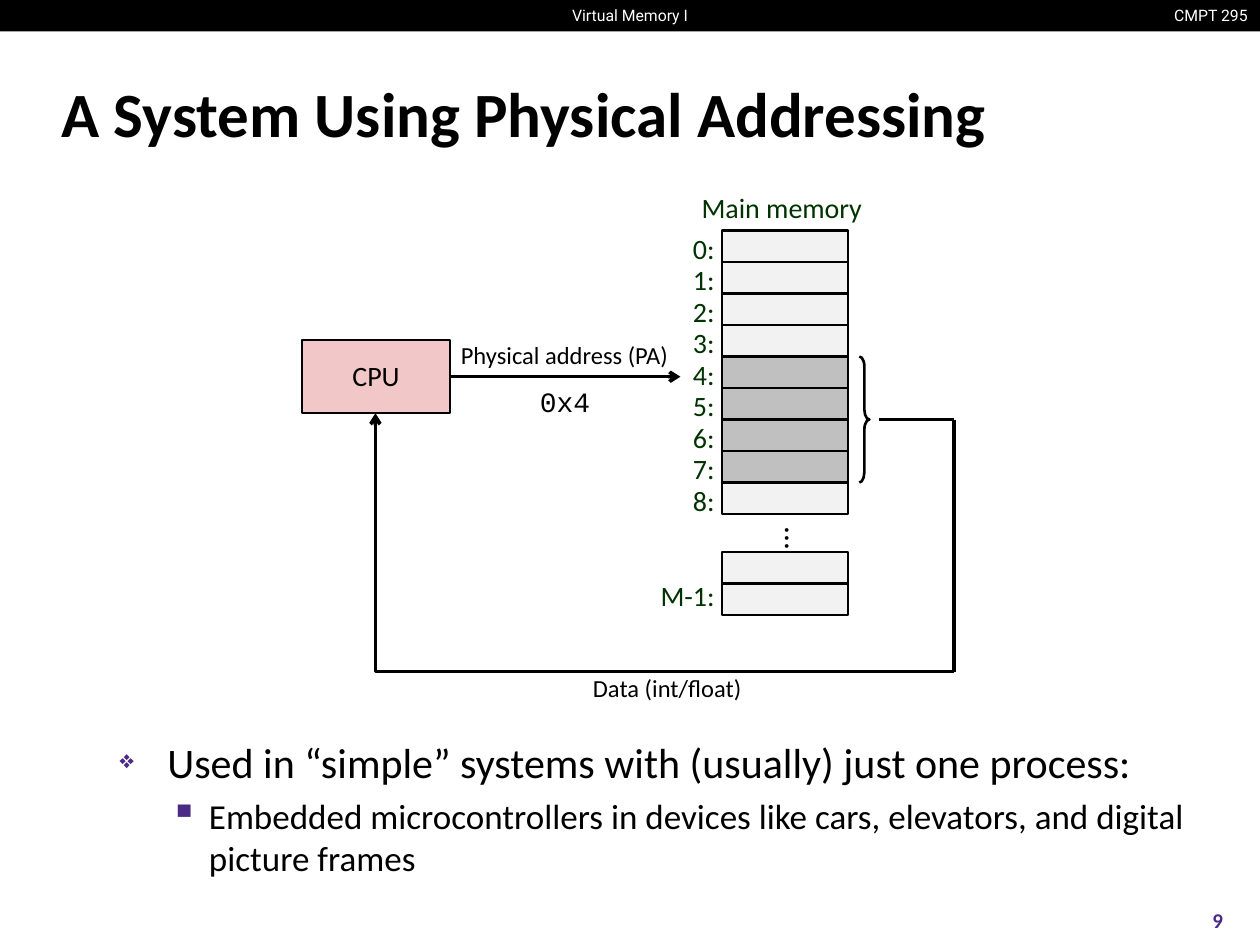
from dataclasses import dataclass
from lxml.etree import SubElement
from pptx import Presentation
from pptx.dml.color import RGBColor
from pptx.enum.shapes import MSO_CONNECTOR as Link, MSO_SHAPE as Kind
from pptx.enum.text import MSO_ANCHOR as Anchor, PP_ALIGN as Align
from pptx.oxml.ns import qn
from pptx.util import Inches, Pt


@dataclass(frozen=True)
class Theme:
    black: str = "000000"
    white: str = "FFFFFF"
    green: str = "003300"
    purple: str = "4B2A85"
    pink: str = "F1C7C7"
    pale: str = "F2F2F2"
    gray: str = "C0C0C0"
    body: str = "Calibri"
    code: str = "Courier New"
    bar: str = "Roboto"
    title: int = 36
    main: int = 24
    sub: int = 20
    dots: int = 18
    label: int = 16
    note: int = 14
    page: int = 12
    head: int = 9


T = Theme()


@dataclass(frozen=True)
class Box:
    x: float
    y: float
    w: float
    h: float

    def emu(self) -> tuple:
        return tuple(Inches(v) for v in (self.x, self.y, self.w, self.h))


@dataclass(frozen=True)
class Label:
    text: str
    box: Box
    size: int
    color: str = T.black
    font: str = T.body
    align: Align = Align.CENTER
    anchor: Anchor = Anchor.TOP
    bold: bool = False
    gap: float = 1.0
    before: int = 0


@dataclass(frozen=True)
class Bullet:
    text: str
    size: int
    mark: str
    scale: int
    left: float
    hang: float
    before: float


@dataclass(frozen=True)
class Wire:
    start: tuple
    end: tuple
    kind: Link = Link.STRAIGHT
    arrow: bool = False


def style(run, size: int, color: str, font: str = T.body, bold: bool = False) -> None:
    run.font.size, run.font.name, run.font.bold = Pt(size), font, bold
    run.font.color.rgb = RGBColor.from_string(color)


def fill_text(shape, item: Label) -> None:
    frame = shape.text_frame
    frame.text = item.text
    frame.word_wrap = False
    frame.vertical_anchor = item.anchor
    para = frame.paragraphs[0]
    para.alignment, para.line_spacing = item.align, item.gap
    para.space_before = Pt(item.before)
    style(para.runs[0], item.size, item.color, item.font, item.bold)


def add_label(slide, item: Label):
    shape = slide.shapes.add_textbox(*item.box.emu())
    fill_text(shape, item)
    return shape


def add_block(slide, box: Box, fill: str = "", width: float = 1.5, kind: Kind = Kind.RECTANGLE):
    """Draw an outlined shape; an empty fill leaves it open, width 0 drops the line."""
    shape = slide.shapes.add_shape(kind, *box.emu())
    shape.shadow.inherit = False
    if fill:
        shape.fill.solid()
        shape.fill.fore_color.rgb = RGBColor.from_string(fill)
    else:
        shape.fill.background()
    if width:
        shape.line.color.rgb = RGBColor.from_string(T.black)
        shape.line.width = Pt(width)
    else:
        shape.line.fill.background()
    return shape


def add_wire(slide, wire: Wire):
    ends = (Inches(v) for v in wire.start + wire.end)
    link = slide.shapes.add_connector(wire.kind, *ends)
    link.line.color.rgb = RGBColor.from_string(T.black)
    link.line.width = Pt(2)
    if wire.arrow:
        SubElement(link.line._get_or_add_ln(), qn("a:tailEnd"), type="arrow")
    props = link._element.spPr
    SubElement(props, qn("a:effectLst"))
    if wire.kind == Link.ELBOW:
        # Turn only at the far end, so the path has a single corner.
        guides = props.find(qn("a:prstGeom")).get_or_add_avLst()
        SubElement(guides, qn("a:gd"), name="adj1", fmla="val 100000")
    return link


def add_bullets(slide, box: Box, items: list[Bullet]) -> None:
    frame = slide.shapes.add_textbox(*box.emu()).text_frame
    frame.word_wrap = True
    frame.text = "\n".join(item.text for item in items)
    for level, (para, item) in enumerate(zip(frame.paragraphs, items)):
        para.level, para.space_before = level, Pt(item.before)
        style(para.runs[0], item.size, T.black)
        props = para._p.get_or_add_pPr()
        props.set("marL", str(Inches(item.left)))
        props.set("indent", str(-Inches(item.hang)))
        tint = SubElement(props, qn("a:buClr"))
        SubElement(tint, qn("a:srgbClr"), val=T.purple)
        SubElement(props, qn("a:buSzPct"), val=str(item.scale * 1000))
        SubElement(props, qn("a:buChar"), char=item.mark)


def add_frame(slide) -> None:
    add_block(slide, Box(0, 0, 10, 0.25), T.black, 0)
    for item in (
        Label("CMPT 295", Box(9.19, 0, 0.81, 0.25), T.head, T.white, T.bar, Align.RIGHT),
        Label("Virtual Memory I", Box(4.42, 0, 1.16, 0.25), T.head, T.white, T.bar),
        Label("A System Using Physical Addressing", Box(0.39, 0.48, 9.19, 0.83), T.title,
              align=Align.LEFT, anchor=Anchor.MIDDLE, bold=True),
        Label("9", Box(9.33, 7.1, 0.67, 0.4), T.page, T.purple,
              anchor=Anchor.MIDDLE, bold=True),
    ):
        add_label(slide, item)


def add_memory(slide) -> None:
    left, top, high, count = 5.73, 1.83, 0.25, 9
    word = range(4, 8)
    tags = [(f"{i}:", top - 0.01 + i * high) for i in range(count)] + [("M-1:", 4.58)]
    for i in range(count):
        add_block(slide, Box(left, top + i * high, 1, high), T.gray if i in word else T.pale)
    for i in range(2):
        add_block(slide, Box(left, 4.38 + i * high, 1, high), T.pale)
    for text, y in tags:
        add_label(slide, Label(text, Box(5.14, y, 0.63, 0.33), T.label, T.green,
                               align=Align.RIGHT, gap=0.88, before=6))
    add_label(slide, Label("Main memory", Box(5.46, 1.5, 1.49, 0.33), T.label, T.green,
                           gap=0.88, before=6))
    dots = add_label(slide, Label("...", Box(5.82, 4.08, 1, 0.25), T.dots,
                                  anchor=Anchor.MIDDLE, gap=0.98))
    dots.text_frame._txBody.bodyPr.set("vert", "eaVert")
    brace = add_block(slide, Box(6.82, top + word[0] * high, 0.08, len(word) * high),
                      kind=Kind.RIGHT_BRACE)
    brace.adjustments[0] = 1


def add_paths(slide) -> None:
    place = Box(2.4, 2.7, 1.17, 0.58)
    cpu = add_block(slide, place, T.pink, 1)
    fill_text(cpu, Label("CPU", place, T.label, anchor=Anchor.MIDDLE, gap=0.98))
    for text, box in (("Physical address (PA)", Box(3.55, 2.66, 1.86, 0.33)),
                      ("Data (int/float)", Box(4.6, 5.3, 1.39, 0.33))):
        add_label(slide, Label(text, box, T.note, anchor=Anchor.MIDDLE, gap=0.98))
    add_label(slide, Label("0x4", Box(4.18, 3, 0.61, 0.37), T.label, font=T.code))
    send = add_wire(slide, Wire((3.57, 2.99), (5.4, 2.99), arrow=True))
    send.begin_connect(cpu, 3)
    for wire in (Wire((6.98, 3.33), (7.57, 3.33)),
                 Wire((7.57, 3.33), (7.57, 5.33)),
                 Wire((7.57, 5.33), (2.98, 3.28), Link.ELBOW, True)):
        add_wire(slide, wire)


def main() -> None:
    deck = Presentation()
    deck.slide_width, deck.slide_height = Inches(10), Inches(7.5)
    slide = deck.slides.add_slide(deck.slide_layouts[6])
    add_frame(slide)
    add_memory(slide)
    add_paths(slide)
    add_bullets(slide, Box(0.85, 5.8, 9.15, 1.3), [
        Bullet("Used in “simple” systems with (usually) just one process:",
               T.main, "❖", 60, 0.38, 0.38, 4.8),
        Bullet("Embedded microcontrollers in devices like cars, elevators, "
               "and digital picture frames", T.sub, "▪", 110, 0.71, 0.31, 4),
    ])
    deck.save("out.pptx")


if __name__ == "__main__":
    main()
